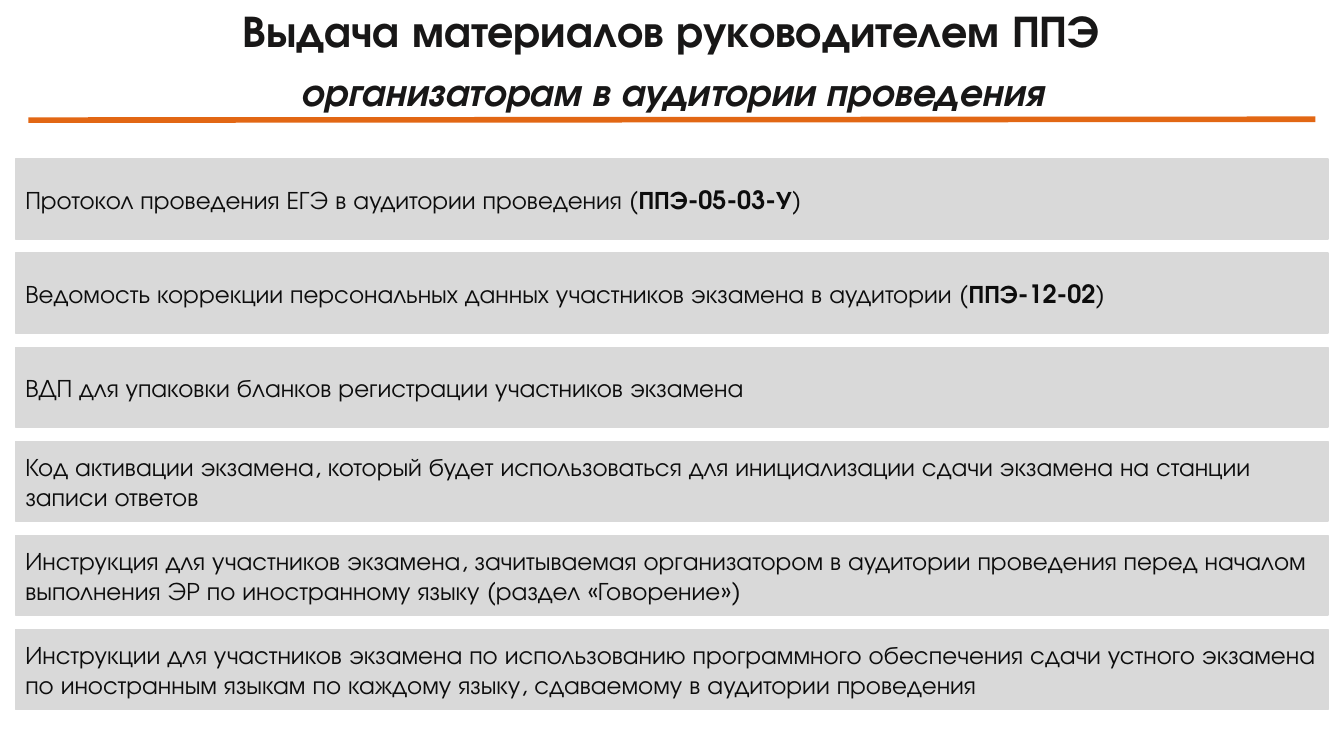
from lxml import etree
from pptx import Presentation
from pptx.dml.color import RGBColor
from pptx.enum.shapes import MSO_CONNECTOR, MSO_SHAPE
from pptx.enum.text import MSO_ANCHOR, MSO_AUTO_SIZE, PP_ALIGN
from pptx.oxml.ns import qn
from pptx.util import Pt

STRAIGHT = MSO_CONNECTOR.STRAIGHT
RECTANGLE = MSO_SHAPE.RECTANGLE
MIDDLE = MSO_ANCHOR.MIDDLE
FIT_SHAPE = MSO_AUTO_SIZE.SHAPE_TO_FIT_TEXT
CENTER, LEFT = PP_ALIGN.CENTER, PP_ALIGN.LEFT

FONT = "TeX Gyre Adventor"
HEADING_COLOR = RGBColor(0x18, 0x17, 0x17)
TEXT_COLOR = RGBColor(0x0D, 0x0D, 0x0D)
BAR_COLOR = RGBColor(0xD9, 0xD9, 0xD9)
RULE_COLOR = RGBColor(0xE2, 0x67, 0x14)

# Text, left, top, width, height, size, italic, wrap
HEADINGS = [
    ("Выдача материалов руководителем ППЭ",
     134.6, -1.4, 689.8, 46, 32, False, False),
    ("организаторам в аудитории проведения",
     172.8, 44.6, 614.9, 41, 28, True, True),
]

# Text before the form code, form code, text after it
MATERIALS = [
    ("Протокол проведения ЕГЭ в аудитории проведения (", "ППЭ-05-03-У", ")"),
    ("Ведомость коррекции персональных данных участников экзамена "
     "в аудитории (", "ППЭ-12-02", ")"),
    ("ВДП для упаковки бланков регистрации участников экзамена",),
    ("Код активации экзамена, который будет использоваться для "
     "инициализации сдачи экзамена на станции записи ответов",),
    ("Инструкция для участников экзамена, зачитываемая организатором "
     "в аудитории проведения перед началом выполнения ЭР по иностранному "
     "языку (раздел «Говорение»)",),
    ("Инструкции для участников экзамена по использованию программного "
     "обеспечения сдачи устного экзамена по иностранным языкам по каждому "
     "языку, сдаваемому в аудитории проведения",),
]
BAR_LEFT, BAR_TOP, BAR_WIDTH, BAR_HEIGHT = 11, 113.6, 937.5, 57
BAR_PITCH = 67.2


def add_span(para, text, size, color, bold=False, italic=False):
    span = para.add_run()
    span.text = text
    span.font.name = FONT
    span.font.size = Pt(size)
    span.font.bold = bold
    span.font.italic = italic
    span.font.color.rgb = color


deck = Presentation()
deck.slide_width, deck.slide_height = Pt(960), Pt(540)
page = deck.slides.add_slide(deck.slide_layouts[6])

for text, left, top, width, height, size, italic, wrap in HEADINGS:
    box = page.shapes.add_textbox(Pt(left), Pt(top), Pt(width), Pt(height))
    box.text_frame.word_wrap = wrap
    box.text_frame.auto_size = FIT_SHAPE
    para = box.text_frame.paragraphs[0]
    para.alignment = CENTER
    add_span(para, text, size, HEADING_COLOR, True, italic)

rule = page.shapes.add_connector(STRAIGHT, Pt(20.3), Pt(85.8), Pt(939.5), Pt(85.2))
rule.line.color.rgb = RULE_COLOR
rule.line.width = Pt(4)
etree.SubElement(rule._element.spPr, qn("a:effectLst"))

for row, parts in enumerate(MATERIALS):
    bar = page.shapes.add_shape(RECTANGLE, Pt(BAR_LEFT), Pt(BAR_TOP + row * BAR_PITCH),
                                Pt(BAR_WIDTH), Pt(BAR_HEIGHT))
    bar.shadow.inherit = False
    bar.fill.solid()
    bar.fill.fore_color.rgb = BAR_COLOR
    bar.line.color.rgb = BAR_COLOR
    bar.line.width = Pt(1)
    bar.text_frame.word_wrap = True
    bar.text_frame.vertical_anchor = MIDDLE
    para = bar.text_frame.paragraphs[0]
    para.alignment = LEFT
    for index, part in enumerate(parts):
        add_span(para, part, 18, TEXT_COLOR, bold=index == 1)

deck.save("out.pptx")
